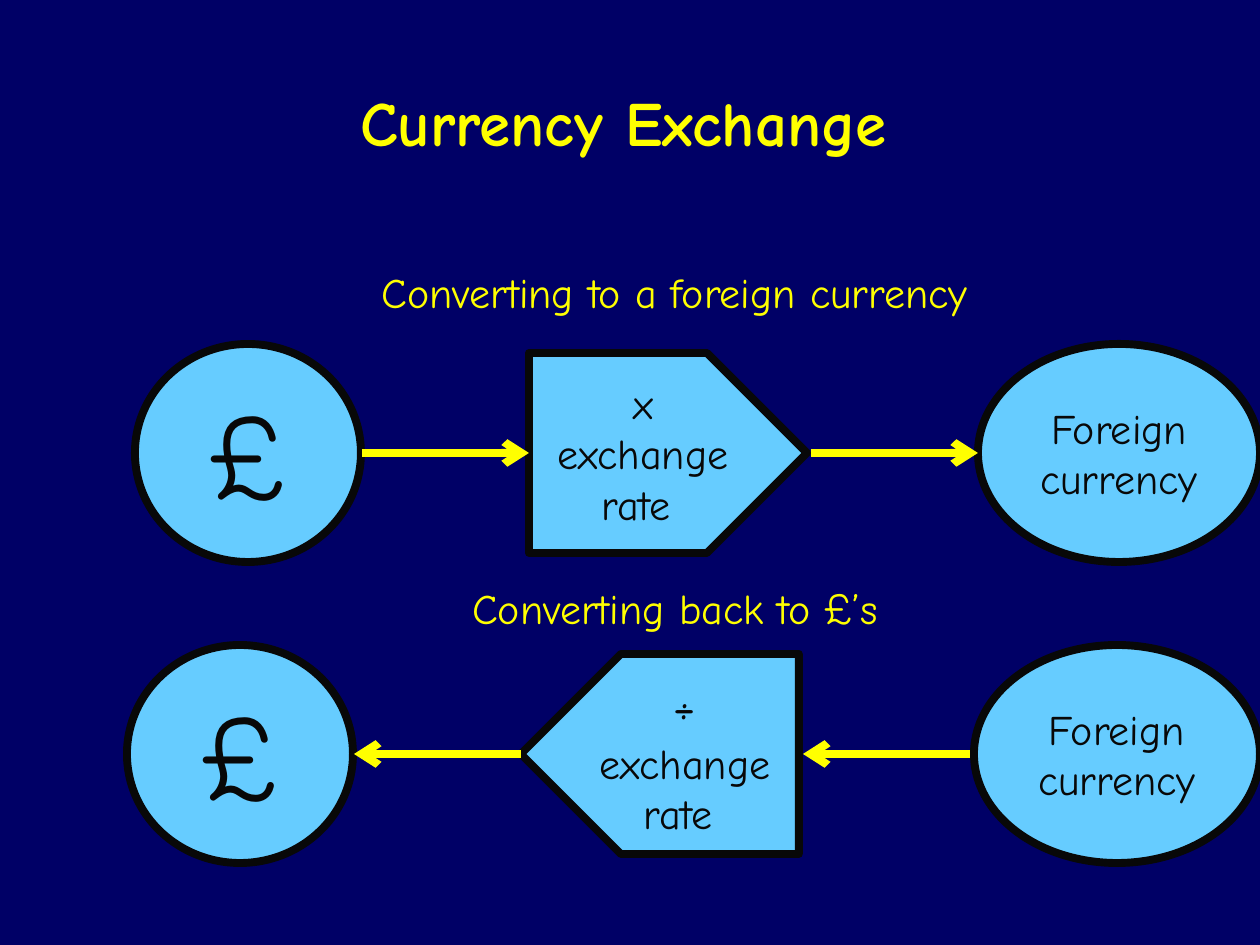
from collections import namedtuple
from dataclasses import dataclass

from lxml.etree import SubElement
from pptx import Presentation
from pptx.dml.color import RGBColor
from pptx.enum.shapes import MSO_CONNECTOR, MSO_SHAPE
from pptx.enum.text import MSO_ANCHOR, PP_ALIGN
from pptx.oxml.ns import qn
from pptx.util import Emu, Pt

SCALE = 914400 // 126
Box = namedtuple("Box", "x y w h")


@dataclass(frozen=True)
class Theme:
    back: RGBColor = RGBColor(0x00, 0x00, 0x66)
    glow: RGBColor = RGBColor(0xFF, 0xFF, 0x00)
    fill: RGBColor = RGBColor(0x66, 0xCC, 0xFF)
    ink: RGBColor = RGBColor(0x08, 0x08, 0x08)
    font: str = "Comic Neue"
    title: int = 36
    body: int = 24
    sign: int = 32
    pound: int = 66
    line: float = 4.5


THEME = Theme()


def px(*nums):
    return [Emu(num * SCALE) for num in nums]


def write(frame, runs, color, bold=False):
    para = frame.paragraphs[0]
    para.alignment = PP_ALIGN.CENTER
    for text, size in runs:
        run = para.add_run()
        run.text = text
        font = run.font
        font.name, font.size, font.bold = THEME.font, Pt(size), bold
        font.color.rgb = color


def label(slide, box, text, size, bold=False, wrap=False, anchor=MSO_ANCHOR.TOP):
    frame = slide.shapes.add_textbox(*px(*box)).text_frame
    frame.word_wrap = wrap
    frame.vertical_anchor = anchor
    write(frame, [(text, size)], THEME.glow, bold)


def block(slide, kind, box, runs):
    shape = slide.shapes.add_shape(kind, *px(*box))
    shape.shadow.inherit = False
    shape.fill.solid()
    shape.fill.fore_color.rgb = THEME.fill
    shape.line.color.rgb = THEME.ink
    shape.line.width = Pt(THEME.line)
    frame = shape.text_frame
    frame.word_wrap = True
    frame.vertical_anchor = MSO_ANCHOR.MIDDLE
    write(frame, runs, THEME.ink)
    return shape


def arrow(slide, start, end, y):
    link = slide.shapes.add_connector(MSO_CONNECTOR.STRAIGHT, *px(start, y, end, y))
    link.line.color.rgb = THEME.glow
    link.line.width = Pt(THEME.line)
    SubElement(link.line._get_or_add_ln(), qn("a:tailEnd"), type="arrow")
    SubElement(link._element.spPr, qn("a:effectLst"))
    return link


def flow(slide, box, oval, rate, back=False):
    """Pounds, exchange rate and foreign currency; back runs right to left."""
    x, y, w, h = box
    mid = y + h // 2

    # Pounds, rate and foreign currency
    block(slide, MSO_SHAPE.OVAL, Box(x, y, 226, h), [("£", THEME.pound)])
    plate = block(slide, MSO_SHAPE.PENTAGON, Box(x + 394, y + 9, 278, h - 18), rate)
    if back:
        plate._element.spPr.xfrm.set("flipH", "1")
    block(slide, MSO_SHAPE.OVAL, Box(x + w - oval, y, oval, h),
          [("Foreign currency", THEME.body)])

    # Arrows in the gaps
    gaps = [(x + 227, x + 394), (x + 676, x + 843)]
    links = [arrow(slide, *(gap[::-1] if back else gap), mid) for gap in gaps]
    if not back:
        links[0].end_connect(plate, 1)


def main():
    deck = Presentation()
    deck.slide_width, deck.slide_height = px(1260, 945)
    slide = deck.slides.add_slide(deck.slide_layouts[6])
    slide.background.fill.solid()
    slide.background.fill.fore_color.rgb = THEME.back

    # Title
    label(slide, Box(261, 81, 725, 84), "Currency Exchange", THEME.title,
          bold=True, wrap=True, anchor=MSO_ANCHOR.BOTTOM)

    # Pounds to foreign currency
    label(slide, Box(340, 260, 669, 64), "Converting to a foreign currency", THEME.body)
    flow(slide, Box(135, 344, 1125, 218), 282, [("x exchange rate ", THEME.body)])

    # Foreign currency to pounds
    label(slide, Box(440, 576, 470, 64), "Converting back to £’s", THEME.body)
    flow(slide, Box(127, 645, 1133, 218), 286,
         [("÷", THEME.sign), (" exchange rate ", THEME.body)], back=True)

    deck.save("out.pptx")


if __name__ == "__main__":
    main()
